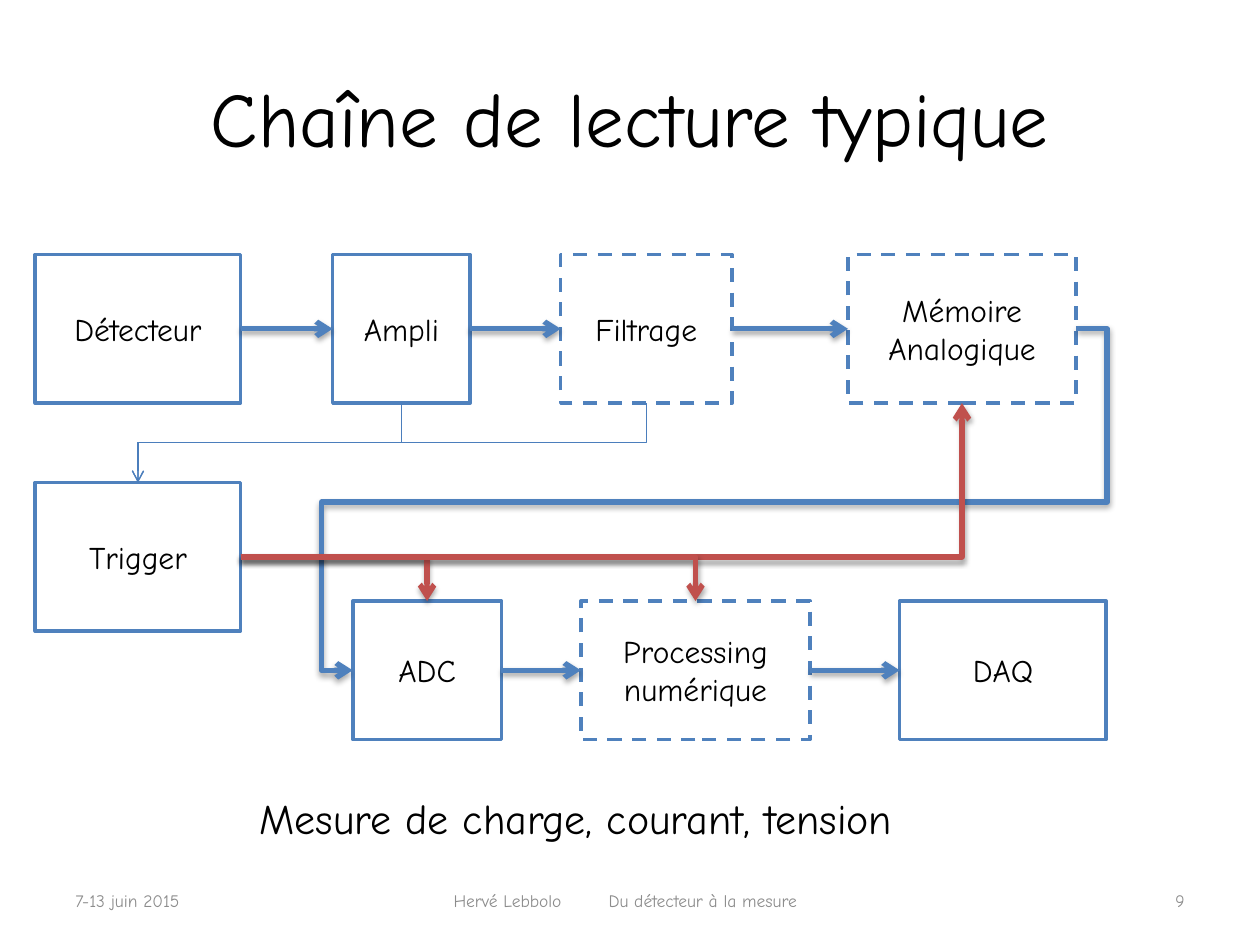
from lxml.etree import SubElement
from pptx import Presentation
from pptx.dml.color import RGBColor
from pptx.enum.dml import MSO_LINE_DASH_STYLE as DASH
from pptx.enum.shapes import MSO_CONNECTOR as LINK, MSO_SHAPE
from pptx.enum.text import MSO_ANCHOR as ANCHOR, MSO_AUTO_SIZE as FIT, PP_ALIGN as ALIGN
from pptx.oxml.ns import qn
from pptx.util import Inches, Pt

FONT = "Comic Neue"
COLORS = {
    "text": "000000",
    "footer": "8C8C8C",
    "box": "FFFFFF",
    "signal": "4F81BD",
    "trigger": "C0504D",
    "tap": "4B7EBC",
}
TOP, LEFT, BOTTOM, RIGHT = range(4)  # connection sites of a rectangle


def color(name):
    return RGBColor.from_string(COLORS[name])


def write(shape, text, size, align=ALIGN.LEFT, ink="text", **frame_format):
    """Fill a shape with text, one paragraph per line."""
    frame = shape.text_frame
    frame_format = {"word_wrap": True, "vertical_anchor": ANCHOR.MIDDLE, **frame_format}
    for name, value in frame_format.items():
        setattr(frame, name, value)
    frame.text = text
    for paragraph in frame.paragraphs:
        paragraph.alignment = align
        for name, value in {"name": FONT, "size": Pt(size)}.items():
            setattr(paragraph.font, name, value)
        paragraph.font.color.rgb = color(ink)


def add_label(slide, area, text, size, **text_format):
    label = slide.shapes.add_textbox(*map(Inches, area))
    write(label, text, size, **text_format)
    return label


def add_stage(slide, text, left, top, width, height, optional=False):
    """Add one block of the chain; optional blocks have a dashed outline."""
    stage = slide.shapes.add_shape(
        MSO_SHAPE.RECTANGLE, *map(Inches, (left, top, width, height)))
    stage.shadow.inherit = False
    stage.fill.solid()
    stage.fill.fore_color.rgb = color("box")
    stage.line.color.rgb = color("signal")
    stage.line.width = Pt(2)
    if optional:
        stage.line.dash_style = DASH.DASH
    write(stage, text, 18, align=ALIGN.CENTER)
    return stage


def add_link(slide, source, source_site, target, target_site,
             ink="signal", width=3, shadow=True, bend=None, adjust=()):
    """Glue an arrow between two stages; bend names the elbow geometry."""
    link = slide.shapes.add_connector(LINK.ELBOW if bend else LINK.STRAIGHT, 0, 0, 0, 0)
    link.begin_connect(source, source_site)
    link.end_connect(target, target_site)
    link.line.color.rgb = color(ink)
    link.line.width = Pt(width)
    SubElement(link.line._get_or_add_ln(), qn("a:tailEnd"), type="arrow")

    properties = link._element.spPr
    if bend:
        geometry = properties.find(qn("a:prstGeom"))
        geometry.set("prst", bend)
        guides = geometry.find(qn("a:avLst"))
        for number, value in enumerate(adjust, 1):
            SubElement(guides, qn("a:gd"), name=f"adj{number}", fmla=f"val {value}")
    effects = SubElement(properties, qn("a:effectLst"))
    if shadow:
        outer = SubElement(effects, qn("a:outerShdw"), blurRad=str(Pt(3.1)),
                           dist=str(Pt(1.8)), dir="5400000", rotWithShape="0")
        black = SubElement(outer, qn("a:srgbClr"), val=COLORS["text"])
        SubElement(black, qn("a:alpha"), val="35000")
    return link


def turn_down(link):
    """Turn an elbow a quarter so that it leaves downwards, to the left."""
    left, top, width, height = link.left, link.top, link.width, link.height
    link.left = left + (width - height) // 2
    link.top = top + (height - width) // 2
    link.width, link.height = height, width
    frame = link._element.spPr.find(qn("a:xfrm"))
    frame.attrib.pop("flipH", None)
    frame.set("rot", "5400000")


def add_footer(slide):
    top, height = 6.95, 0.4
    grey = {"size": 10, "ink": "footer"}
    add_label(slide, (0.5, top, 1.51, height), "7-13 juin 2015", **grey)
    credit = add_label(slide, (2.32, top, 5.28, height),
                       "Hervé Lebbolo\tDu détecteur à la mesure",
                       margin_left=Inches(1.28), **grey)
    properties = credit.text_frame.paragraphs[0]._p.get_or_add_pPr()
    stops = SubElement(properties, qn("a:tabLst"))
    SubElement(stops, qn("a:tab"), pos=str(Inches(1.23)), algn="l")
    properties.insert(0, stops)
    add_label(slide, (8.31, top, 1.19, height), "9", align=ALIGN.RIGHT, **grey)


def main():
    deck = Presentation()
    deck.slide_width, deck.slide_height = Inches(10), Inches(7.5)
    slide = deck.slides.add_slide(deck.slide_layouts[5])

    # Title
    title = slide.shapes.title
    title.left, title.top, title.width, title.height = map(Inches, (0.5, 0.3, 9, 1.25))
    write(title, "Chaîne de lecture typique", 44, align=ALIGN.CENTER)
    add_footer(slide)

    # Stages: analogue row, digital row, trigger
    analog = {"top": 2.02, "height": 1.18}
    digital = {"top": 4.77, "height": 1.1}
    detector = add_stage(slide, "Détecteur", left=0.28, width=1.63, **analog)
    ampli = add_stage(slide, "Ampli", left=2.64, width=1.09, **analog)
    filtering = add_stage(slide, "Filtrage", left=4.45, width=1.36, optional=True, **analog)
    memory = add_stage(slide, "Mémoire\nAnalogique", left=6.73, width=1.81,
                       optional=True, **analog)
    adc = add_stage(slide, "ADC", left=2.8, width=1.18, **digital)
    processing = add_stage(slide, "Processing numérique", left=4.61, width=1.82,
                           optional=True, **digital)
    daq = add_stage(slide, "DAQ", left=7.14, width=1.64, **digital)

    # Signal path
    for row in ((detector, ampli, filtering, memory), (adc, processing, daq)):
        for source, target in zip(row, row[1:]):
            add_link(slide, source, RIGHT, target, LEFT)
    add_link(slide, memory, RIGHT, adc, LEFT,
             bend="bentConnector5", adjust=(-4300, 50700, 104300))

    # Trigger commands
    trigger = add_stage(slide, "Trigger", 0.28, 3.83, 1.63, 1.18)
    for target, site in ((memory, BOTTOM), (adc, TOP), (processing, TOP)):
        add_link(slide, trigger, RIGHT, target, site, ink="trigger", bend="bentConnector2")

    # Thin taps feeding the trigger
    for source in (ampli, filtering):
        tap = add_link(slide, source, BOTTOM, trigger, TOP, ink="tap", width=0.75,
                       shadow=False, bend="bentConnector3", adjust=(50000,))
        turn_down(tap)

    # Caption
    add_label(slide, (1.96, 6.24, 5.72, 0.5), "Mesure de charge, courant, tension", 24,
              word_wrap=False, vertical_anchor=ANCHOR.TOP, auto_size=FIT.SHAPE_TO_FIT_TEXT)

    deck.save("out.pptx")


if __name__ == "__main__":
    main()
